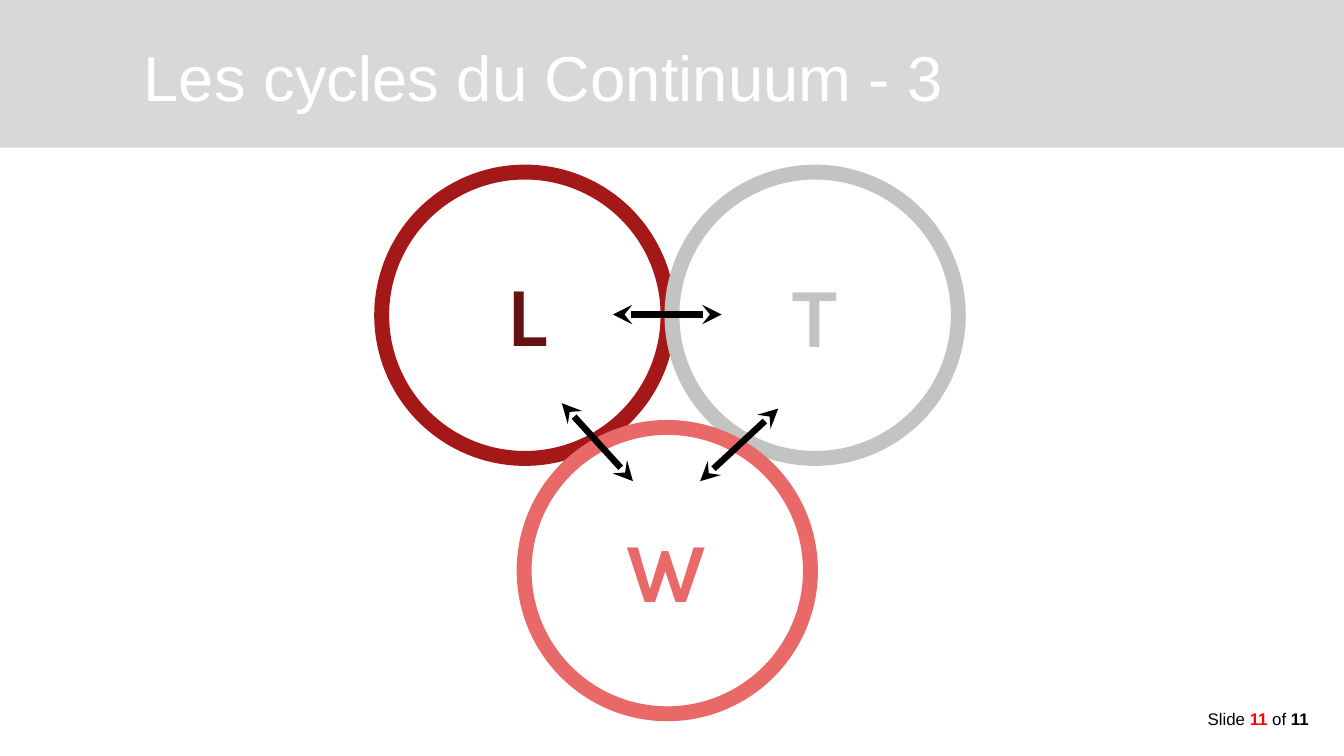
from lxml.etree import SubElement
from pptx import Presentation
from pptx.dml.color import RGBColor
from pptx.enum.shapes import MSO_CONNECTOR as Connector, MSO_SHAPE as Shape
from pptx.enum.text import MSO_ANCHOR as Anchor, MSO_AUTO_SIZE as AutoSize, PP_ALIGN as Align
from pptx.oxml.ns import qn
from pptx.util import Pt

RING_SIZE = 153.4
LETTER_SIZE = (53.3, 59.8)
RINGS = [
    ("L", "A41917", "651212", (204.5, 92.2), (255.6, 137.5)),
    ("T", "C2C4C2", "C2C4C2", (360, 92.2), (409.7, 138.2)),
    ("W", "E86967", "E86967", (280.8, 229), (330.5, 275)),
]
ARROWS = [
    (328.3, 168.5, 386.6, 168.5),
    (339.1, 257.8, 301, 216),
    (416.9, 218.9, 375.1, 257.8),
]


def color(value):
    return RGBColor.from_string(value)


def apply_format(target, values):
    for name, value in values.items():
        setattr(target, name, value)


class SlideBuilder:
    frame_format = {
        "margin_left": Pt(5), "margin_right": Pt(5),
        "margin_top": Pt(2.9), "margin_bottom": Pt(2.9),
        "word_wrap": True,
    }

    def __init__(self, slide):
        self.slide = slide
        self.shapes = slide.shapes

    def fill_text(self, shape, runs, align, anchor, auto_size):
        frame = shape.text_frame
        apply_format(frame, {**self.frame_format, "vertical_anchor": anchor, "auto_size": auto_size})
        paragraph = frame.paragraphs[0]
        paragraph.alignment = align
        for text, font, size, bold, fill in runs:
            run = paragraph.add_run()
            run.text = text
            apply_format(run.font, {"name": font, "size": Pt(size), "bold": bold})
            run.font.color.rgb = color(fill)

    def bar(self, left, top, width, height, fill):
        shape = self.shapes.add_shape(Shape.RECTANGLE, Pt(left), Pt(top), Pt(width), Pt(height))
        shape.shadow.inherit = False
        shape.fill.solid()
        shape.fill.fore_color.rgb = color(fill)
        shape.line.fill.background()

    def title(self, text, left, top, width, height):
        shape = self.shapes.title
        apply_format(shape, {"left": Pt(left), "top": Pt(top), "width": Pt(width), "height": Pt(height)})
        self.fill_text(shape, [(text, "Arial", 34, False, "FFFFFF")], Align.LEFT, Anchor.MIDDLE, AutoSize.NONE)
        self.shapes._spTree.append(shape._element)

    def text(self, runs, left, top, width, height, align, anchor):
        shape = self.shapes.add_textbox(Pt(left), Pt(top), Pt(width), Pt(height))
        self.fill_text(shape, runs, align, anchor, AutoSize.SHAPE_TO_FIT_TEXT)

    def ring(self, left, top, stroke):
        shape = self.shapes.add_shape(
            Shape.FLOWCHART_CONNECTOR, Pt(left), Pt(top), Pt(RING_SIZE), Pt(RING_SIZE))
        shape.shadow.inherit = False
        shape.fill.background()
        shape.line.color.rgb = color(stroke)
        shape.line.width = Pt(8)

    def double_arrow(self, *ends):
        connector = self.shapes.add_connector(Connector.STRAIGHT, *map(Pt, ends))
        connector.line.color.rgb = color("000000")
        connector.line.width = Pt(3.5)
        line = connector.line._get_or_add_ln()
        for end in ("a:headEnd", "a:tailEnd"):
            SubElement(line, qn(end), type="stealth")
        SubElement(connector._element.spPr, qn("a:effectLst"))


def main():
    presentation = Presentation()
    apply_format(presentation, {"slide_width": Pt(720), "slide_height": Pt(405)})
    builder = SlideBuilder(presentation.slides.add_slide(presentation.slide_layouts[5]))

    builder.bar(0, 0, 720, 79.2, "D8D8D8")
    page_runs = [
        ("Slide ", "Arial", 9, False, "000000"),
        ("11", "Arial", 9, True, "FF0000"),
        (" of ", "Arial", 9, False, "000000"),
        ("11 ", "Arial", 9, True, "000000"),
    ]
    builder.text(page_runs, 623.5, 376.6, 85, 16.6, Align.RIGHT, Anchor.TOP)
    builder.title("Les cycles du Continuum - 3", 72, 1.4, 575.3, 78.5)

    for _, stroke, _, position, _ in RINGS:
        builder.ring(*position, stroke)
    for letter, _, fill, _, position in RINGS:
        builder.text([(letter, "Karla", 45, True, fill)], *position, *LETTER_SIZE,
                     Align.CENTER, Anchor.MIDDLE)
    for ends in ARROWS:
        builder.double_arrow(*ends)

    presentation.save("out.pptx")


if __name__ == "__main__":
    main()
